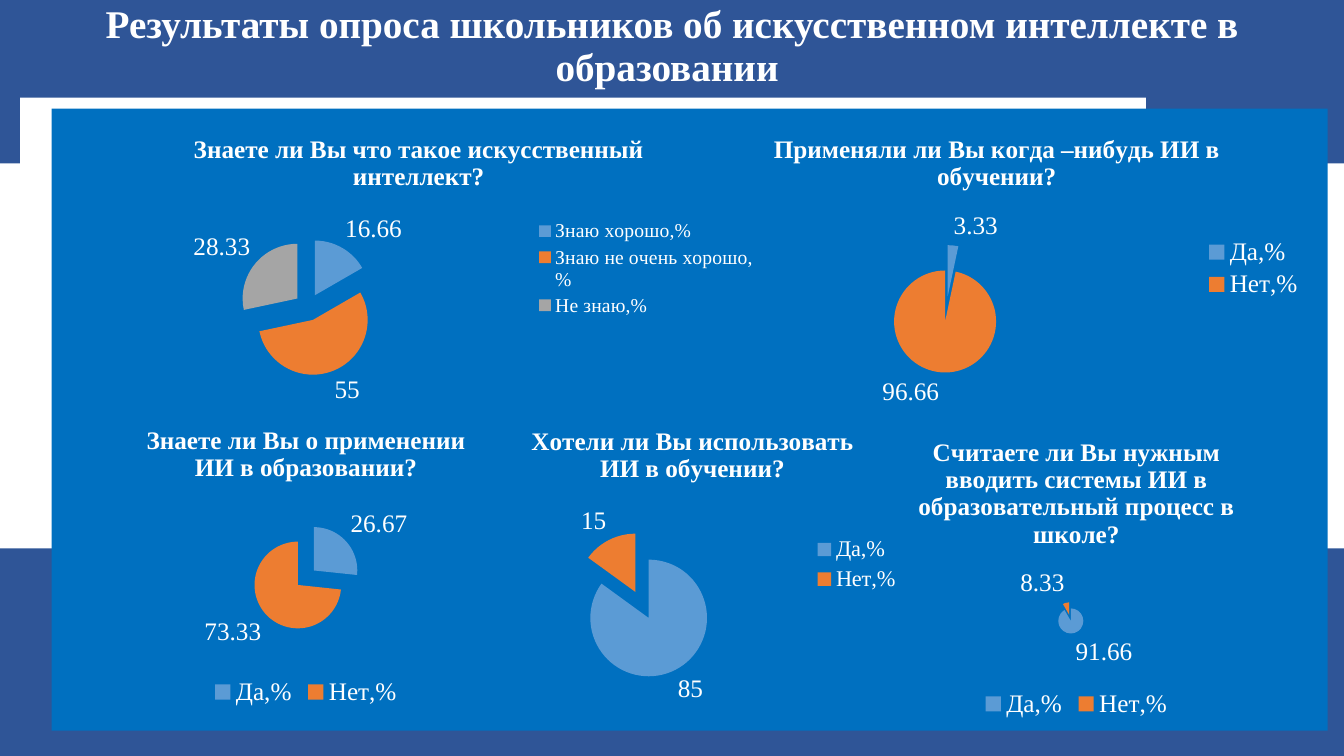
from dataclasses import dataclass

from lxml import etree
from pptx import Presentation
from pptx.chart.data import CategoryChartData
from pptx.dml.color import RGBColor
from pptx.enum.chart import XL_CHART_TYPE as ChartType
from pptx.enum.chart import XL_LABEL_POSITION as LabelPosition
from pptx.enum.chart import XL_LEGEND_POSITION as LegendPosition
from pptx.enum.shapes import MSO_SHAPE as Shape
from pptx.enum.text import MSO_ANCHOR as Anchor
from pptx.enum.text import MSO_AUTO_SIZE as AutoSize
from pptx.enum.text import PP_ALIGN as Align
from pptx.oxml.ns import qn
from pptx.util import Cm, Pt


@dataclass(frozen=True)
class Theme:
    font: str = "Times New Roman"
    white: str = "FFFFFF"
    band: str = "2F5597"
    panel: str = "0070C0"
    slices: tuple = ("5B9BD5", "ED7D31", "A5A5A5")
    heading: int = 28
    chart_text: int = 18


theme = Theme()


def style_font(font, size, bold=False):
    font.name = theme.font
    font.size = Pt(size)
    font.bold = bold
    font.color.rgb = RGBColor.from_string(theme.white)


# Deck and page
deck = Presentation()
deck.slide_width, deck.slide_height = Cm(33.87), Cm(19.05)
page = deck.slides.add_slide(deck.slide_layouts[5])

# Background bands, white card and blue panel
for left, top, width, height, color in (
    (0, 0, 33.87, 4.12, theme.band),
    (0, 13.82, 33.87, 5.23, theme.band),
    (0.51, 2.46, 28.37, 8.18, theme.white),
    (1.3, 2.74, 32.16, 15.67, theme.panel),
):
    box = page.shapes.add_shape(Shape.RECTANGLE, Cm(left), Cm(top), Cm(width), Cm(height))
    box.shadow.inherit = False
    box.fill.solid()
    box.fill.fore_color.rgb = RGBColor.from_string(color)
    box.line.fill.background()

# Title, brought in front of the bands
title = page.shapes.title
box.element.addnext(title.element)
title.left, title.top, title.width, title.height = Cm(0), Cm(0), Cm(33.87), Cm(2.3)
frame = title.text_frame
frame.text = "Результаты опроса школьников об искусственном интеллекте в образовании "
frame.word_wrap = True
frame.auto_size = AutoSize.NONE
frame.vertical_anchor = Anchor.TOP
para = frame.paragraphs[0]
para.alignment = Align.CENTER
para.line_spacing = 0.9
style_font(para.runs[0].font, theme.heading, bold=True)

# Survey questions: text, place, answers, legend side and legend size
yes_no = ("Да,%", "Нет,%")
knowledge = ("Знаю хорошо,%", "Знаю не очень хорошо,%", "Не знаю,%")
right, bottom = LegendPosition.RIGHT, LegendPosition.BOTTOM
questions = (
    ("Знаете ли Вы что такое искусственный интеллект?",
     (1.75, 2.95, 17.6, 7.62), knowledge, (16.66, 55, 28.33), right, 14),
    ("Знаете ли Вы о применении ИИ в образовании?",
     (1.93, 10.29, 11.56, 7.62), yes_no, (26.67, 73.33), bottom, 18),
    ("Применяли ли Вы когда –нибудь ИИ в обучении?",
     (17.12, 2.95, 16, 7.62), yes_no, (3.33, 96.66), right, 18),
    ("Хотели ли Вы использовать ИИ в обучении?",
     (11.94, 10.31, 11.02, 7.82), yes_no, (85, 15), right, 16),
    ("Считаете ли Вы нужным вводить системы ИИ в образовательный процесс в школе?",
     (21.03, 10.59, 12.19, 7.62), yes_no, (91.66, 8.33), bottom, 18),
)

# Exploded pie charts
for question, place, answers, shares, legend_side, legend_size in questions:
    data = CategoryChartData()
    data.categories = answers
    data.add_series(question, shares)
    chart = page.shapes.add_chart(ChartType.PIE, *map(Cm, place), data).chart
    chart.font.name = "Calibri"
    chart.font.size = Pt(10)

    chart.has_title = True
    chart.chart_title.text_frame.text = question
    span = chart.chart_title.text_frame.paragraphs[0].runs[0]
    style_font(span.font, theme.chart_text, bold=True)

    chart.has_legend = True
    chart.legend.position = legend_side
    chart.legend.include_in_layout = False
    style_font(chart.legend.font, legend_size)

    plot = chart.plots[0]
    plot.vary_by_categories = True
    series = plot.series[0]
    explosion = etree.Element(qn("c:explosion"), val="25")
    series._element.find(qn("c:tx")).addnext(explosion)
    for index, color in zip(range(len(shares)), theme.slices):
        fill = series.points[index].format.fill
        fill.solid()
        fill.fore_color.rgb = RGBColor.from_string(color)

    labels = series.data_labels
    labels.show_value = True
    labels.show_percentage = False
    labels.position = LabelPosition.OUTSIDE_END
    labels.number_format = "General"
    labels.number_format_is_linked = False
    style_font(labels.font, theme.chart_text)

deck.save("out.pptx")
